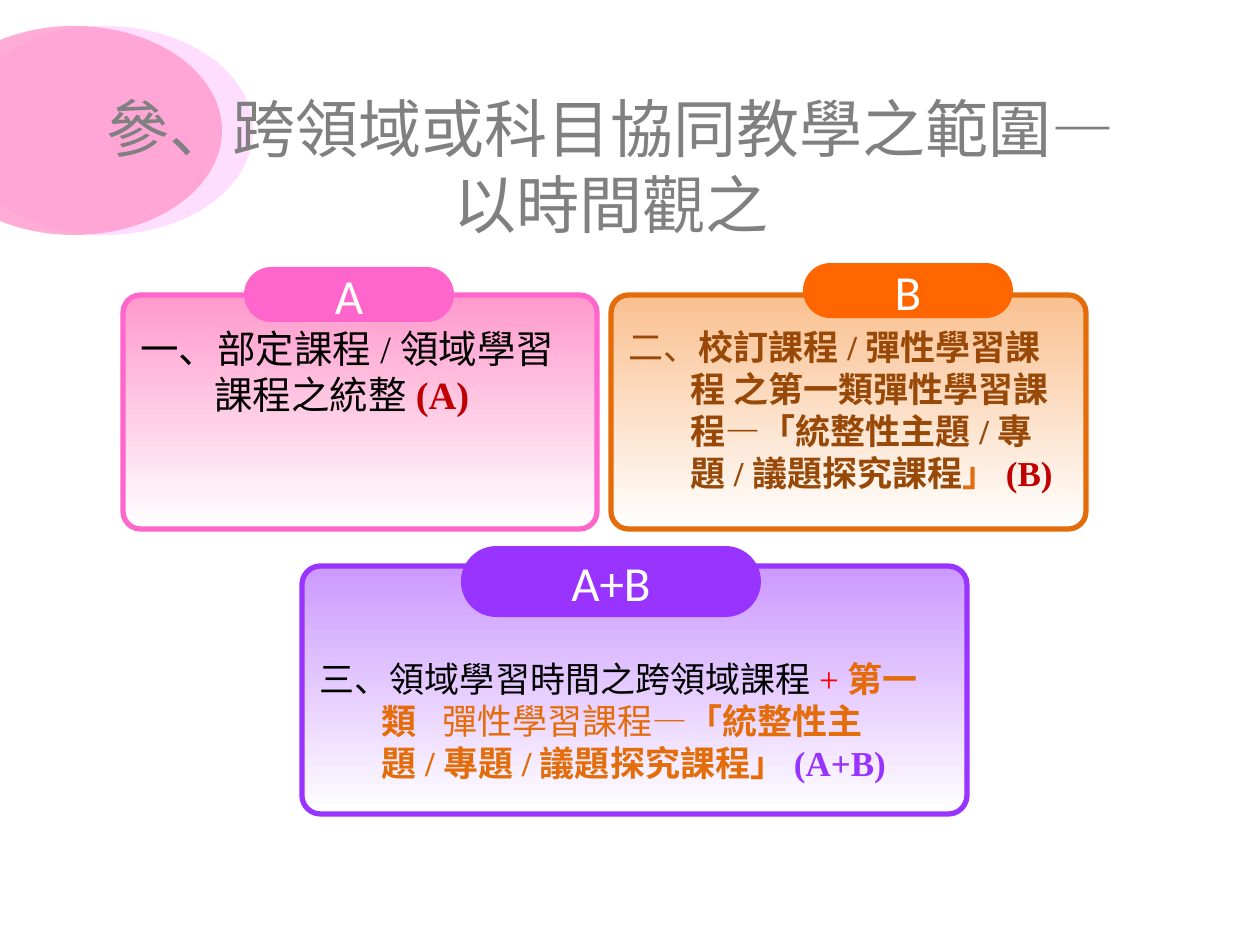
"""Build a slide on the scope of cross-domain team teaching seen by lesson time."""
from dataclasses import dataclass
from typing import Any

import pptx
import pptx.dml.color
import pptx.enum.shapes
import pptx.enum.text
import pptx.oxml
import pptx.oxml.ns
import pptx.util
from lxml import etree

PX_PER_INCH = 126
SERIF, SANS = "Times New Roman", "Calibri"
SHAPE = pptx.enum.shapes.MSO_SHAPE
ANCHOR = pptx.enum.text.MSO_ANCHOR
ALIGN = pptx.enum.text.PP_ALIGN
COLORS = {
    "pale": "FFD5FF", "rose": "FF99CC", "grey": "808080", "pink": "FF66CC",
    "peach": "FAC090", "amber": "E46C0A", "orange": "FF6600", "brown": "984807",
    "lilac": "CC99FF", "violet": "9933FF", "crimson": "C00000", "red": "FF0000",
    "black": "000000", "white": "FFFFFF",
}


@dataclass
class Span:
    text: str
    color: str
    bold: bool = False
    spacing: int = 0


@dataclass
class Card:
    box: tuple[int, int, int, int]
    tab: tuple[int, int, int, int]
    label: str
    tint: str
    edge: str
    tab_color: str
    size: int
    indent: int
    top: int
    spans: list[Span]


CARDS = [
    Card((123, 295, 474, 234), (244, 267, 210, 55), "A", "rose", "pink", "pink", 22, 74, 25, [
        Span("一、部定課程/領域學習課程之統整", "black"),
        Span("(A)", "crimson", True),
    ]),
    Card((611, 295, 475, 234), (803, 263, 210, 55), "B", "peach", "amber", "orange", 20, 62, 25, [
        Span("二、", "brown"),
        Span("校訂課程/彈性學習課程 之第一類彈性學習課程—「統整性主題/專題/議題探究課程", "brown", True),
        Span("」", "amber", True),
        Span("(B)", "crimson", True),
    ]),
    Card((302, 566, 665, 248), (461, 546, 300, 71), "A+B", "lilac", "violet", "violet", 20, 62, 86, [
        Span("三、領域學習時間之跨領域課程", "black"),
        Span("+", "red"),
        Span("第一類", "amber", True),
        Span(" ", "amber", True, 1000),
        Span("彈性學習課程—", "amber"),
        Span("「統整性主題/專題/議題探究課程」", "amber", True),
        Span("(A+B)", "violet", True),
    ]),
]


def px(n: int) -> pptx.util.Emu:
    """Turn pixels into EMU."""
    return pptx.util.Emu(round(n * 914400 / PX_PER_INCH))


def rgb(name: str) -> pptx.dml.color.RGBColor:
    """Look up a named colour."""
    return pptx.dml.color.RGBColor.from_string(COLORS[name])


def apply(obj: Any, values: dict[str, Any]) -> None:
    """Set attributes from a dict of format values."""
    for key, value in values.items():
        setattr(obj, key, value)


def add_shape(shapes: Any, kind: Any, box: tuple[int, int, int, int]) -> Any:
    """Add a preset shape with no shadow and no line."""
    sp = shapes.add_shape(kind, *map(px, box))
    sp.shadow.inherit = False
    sp.line.fill.background()
    return sp


def add_run(p: Any, span: Span, font: str, size: int) -> Any:
    """Add one formatted run to a paragraph."""
    r = p.add_run()
    r.text = span.text
    apply(r.font, {"name": font, "size": pptx.util.Pt(size), "bold": span.bold})
    r.font.color.rgb = rgb(span.color)
    if span.spacing:
        r.font._element.set("spc", str(span.spacing))
    return r


def add_ellipse(shapes: Any, left: int, color: str) -> None:
    """Draw one translucent corner ellipse."""
    sp = add_shape(shapes, SHAPE.OVAL, (left, 26, 296, 209))
    sp.fill.solid()
    sp.fill.fore_color.rgb = rgb(color)
    clr = sp._element.spPr.find(".//" + pptx.oxml.ns.qn("a:srgbClr"))
    etree.SubElement(clr, pptx.oxml.ns.qn("a:alpha"), val="80000")


def add_title(shapes: Any) -> None:
    """Draw the two-line title with shadowed text."""
    sp = shapes.add_textbox(*map(px, (44, 86, 1134, 158)))
    tf = sp.text_frame
    apply(tf, {"word_wrap": True, "vertical_anchor": ANCHOR.MIDDLE})
    p = tf.paragraphs[0]
    p.alignment = ALIGN.CENTER
    for i, text in enumerate(("參、跨領域或科目協同教學之範圍—", "以時間觀之")):
        if i:
            p.add_line_break()
        r = add_run(p, Span(text, "grey"), SERIF, 36)
        fill = r.font._element.find(pptx.oxml.ns.qn("a:solidFill"))
        fill.addnext(pptx.oxml.parse_xml(
            f'<a:effectLst {pptx.oxml.ns.nsdecls("a")}>'
            '<a:outerShdw blurRad="38100" dist="38100" dir="2700000" algn="tl">'
            '<a:srgbClr val="000000"><a:alpha val="43000"/></a:srgbClr>'
            '</a:outerShdw></a:effectLst>'))


def add_card(shapes: Any, card: Card) -> None:
    """Draw a gradient panel with its text and label tab."""
    sp = add_shape(shapes, SHAPE.ROUNDED_RECTANGLE, card.box)
    sp.adjustments[0] = 0.075
    sp.fill.gradient()
    sp.fill.gradient_angle = 270
    for stop, color, position in zip(sp.fill.gradient_stops, (card.tint, "white"), (0, 1)):
        stop.color.rgb = rgb(color)
        stop.position = position
    sp.line.color.rgb = rgb(card.edge)
    sp.line.width = pptx.util.Pt(3)
    tf = sp.text_frame
    apply(tf, {"word_wrap": True, "vertical_anchor": ANCHOR.TOP, "margin_top": px(card.top)})
    p = tf.paragraphs[0]
    p.alignment = ALIGN.LEFT
    apply_indent = p._p.get_or_add_pPr().set
    apply_indent("marL", str(px(card.indent)))
    apply_indent("indent", str(-px(card.indent)))
    for span in card.spans:
        add_run(p, span, SERIF, card.size)

    sp = add_shape(shapes, SHAPE.ROUNDED_RECTANGLE, card.tab)
    sp.adjustments[0] = 0.5
    sp.fill.solid()
    sp.fill.fore_color.rgb = rgb(card.tab_color)
    tf = sp.text_frame
    apply(tf, {"word_wrap": False, "vertical_anchor": ANCHOR.MIDDLE})
    p = tf.paragraphs[0]
    p.alignment = ALIGN.CENTER
    add_run(p, Span(card.label, "white"), SANS, 28)


def main() -> None:
    """Build and save the slide."""
    prs = pptx.Presentation()
    apply(prs, {"slide_width": px(1260), "slide_height": px(945)})
    s = prs.slides.add_slide(prs.slide_layouts[6])
    corner = s.shapes.add_group_shape().shapes
    for left, color in ((-43, "pale"), (-74, "rose")):
        add_ellipse(corner, left, color)
    add_title(s.shapes)
    for card in CARDS:
        add_card(s.shapes.add_group_shape().shapes, card)
    prs.save("out.pptx")


if __name__ == "__main__":
    main()
